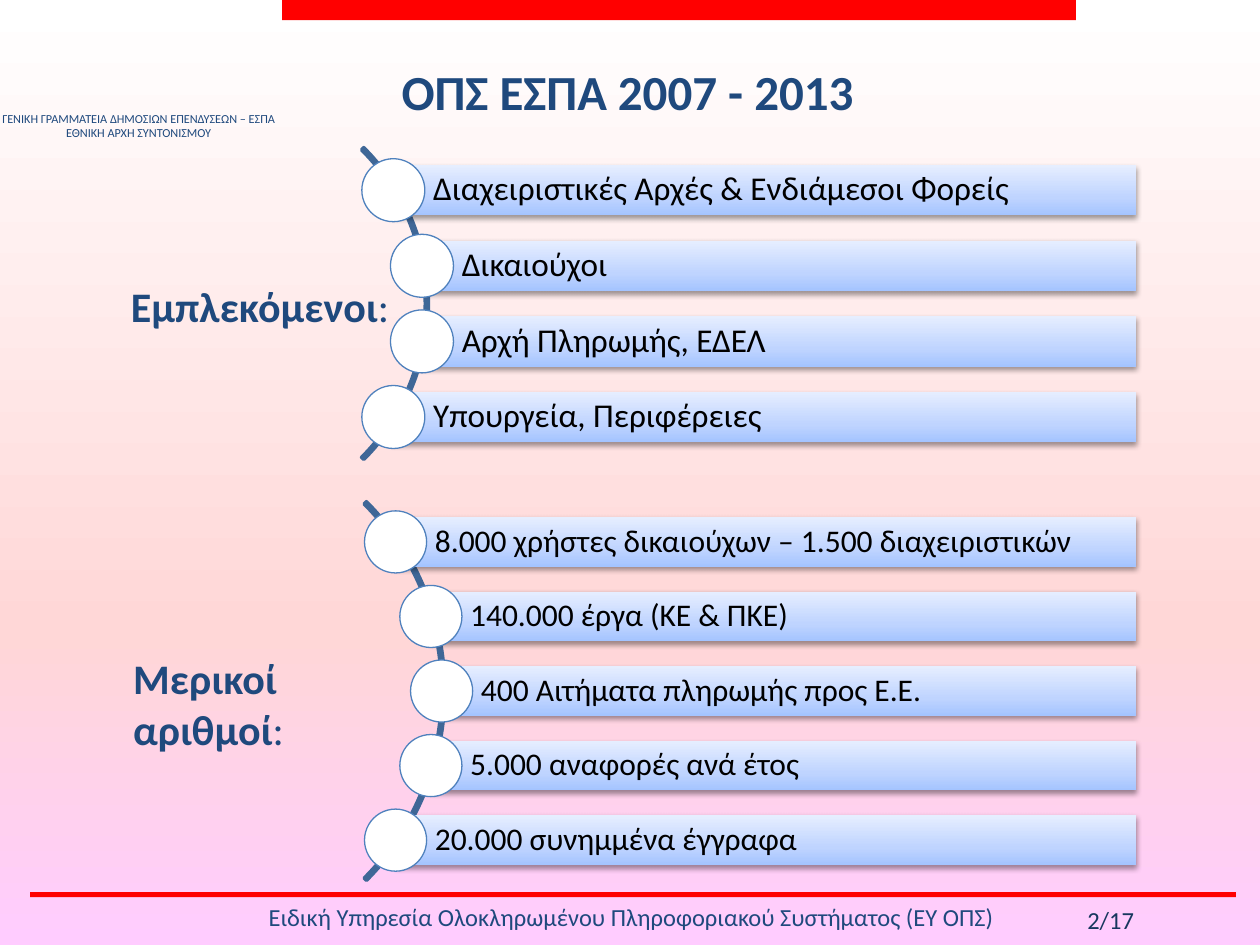
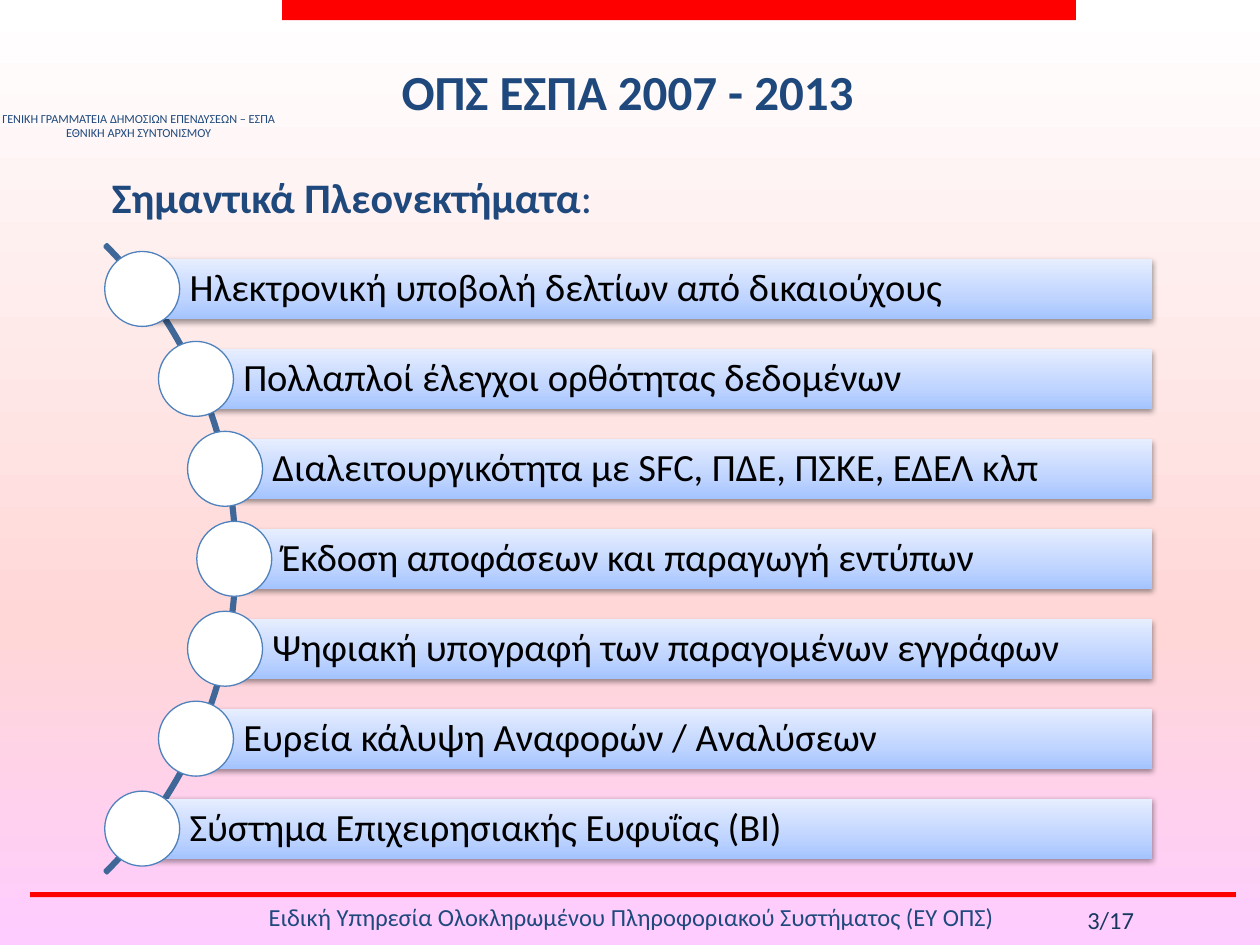
from math import sqrt

from lxml import etree
from pptx import Presentation
from pptx.dml.color import RGBColor
from pptx.enum import shapes, text
from pptx.oxml.ns import qn
from pptx.util import Pt

FONT = "Calibri"
NAVY, DEEP_NAVY, RED = "1F497D", "17375E", "FF0000"
WHITE, BLACK, ARC_BLUE, RING_BLUE = "FFFFFF", "000000", "3F6797", "4F81BD"
PAGE_STOPS = [(0, WHITE), (67, "FFD7D7"), (100, "FFCCFF")]
BAR_STOPS = [(0, "A4C4FF"), (35, "BFD4FF"), (100, "E6EEFF")]
BANDS = [(161.3, 0, 453.6, 11.5), (17.3, 509.8, 689, 2.9)]

TITLE = "ΟΠΣ ΕΣΠΑ 2007 - 2013"
FOOTER = "Ειδική Υπηρεσία Ολοκληρωμένου Πληροφοριακού Συστήματος (ΕΥ ΟΠΣ)"
AGENCY = "ΓΕΝΙΚΗ ΓΡΑΜΜΑΤΕΙΑ ΔΗΜΟΣΙΩΝ ΕΠΕΝΔΥΣΕΩΝ – ΕΣΠΑ\nΕΘΝΙΚΗ ΑΡΧΗ ΣΥΝΤΟΝΙΣΜΟΥ"

PARTIES = {
    "label": "Εμπλεκόμενοι", "label_at": (67.7, 157, 190, 36.7),
    "arc": (-7.2, 47.5, 252), "band": 0.007, "pitch": 43.2, "right": 649.4, "size": 19,
    "items": ["Διαχειριστικές Αρχές & Ενδιάμεσοι Φορείς", "Δικαιούχοι",
              "Αρχή Πληρωμής, ΕΔΕΛ", "Υπουργεία, Περιφέρειες"],
}
NUMBERS = {
    "label": "Μερικοί\vαριθμοί", "label_at": (69, 369.4, 139, 69.8),
    "arc": (-51.8, 241.9, 306), "band": 0.006, "pitch": 42.6, "right": 649.3, "size": 18,
    "items": ["8.000 χρήστες δικαιούχων – 1.500 διαχειριστικών", "140.000 έργα (ΚΕ & ΠΚΕ)",
              "400 Αιτήματα πληρωμής προς Ε.Ε.", "5.000 αναφορές ανά έτος",
              "20.000 συνημμένα έγγραφα"],
}
ADVANTAGES = {
    "label": "Σημαντικά Πλεονεκτήματα", "label_at": (56.9, 94.3, 300, 42.5),
    "arc": (-372.2, 65.5, 507.6), "band": 0.003, "pitch": 51.4, "right": 658.3, "size": 22,
    "items": ["Ηλεκτρονική υποβολή δελτίων από δικαιούχους",
              "Πολλαπλοί έλεγχοι ορθότητας δεδομένων",
              "Διαλειτουργικότητα με SFC, ΠΔΕ, ΠΣΚΕ, ΕΔΕΛ κλπ",
              "Έκδοση αποφάσεων και παραγωγή εντύπων",
              "Ψηφιακή υπογραφή των παραγομένων εγγράφων",
              "Ευρεία κάλυψη Αναφορών / Αναλύσεων",
              "Σύστημα Επιχειρησιακής Ευφυΐας (ΒΙ)"],
}
PAGES = [("2/17", [NUMBERS, PARTIES]), ("3/17", [ADVANTAGES])]


def color(value):
    return RGBColor.from_string(value)


def points(*values):
    return [Pt(value) for value in values]


def add_xml(parent, tag, **attributes):
    return etree.SubElement(parent, qn(tag), {k: str(v) for k, v in attributes.items()})


def set_gradient(fill, owner, stops, angle):
    fill.solid()
    solid = owner.find(qn("a:solidFill"))
    gradient = etree.Element(qn("a:gradFill"), rotWithShape="1")
    stop_list = add_xml(gradient, "a:gsLst")
    for position, value in stops:
        stop = add_xml(stop_list, "a:gs", pos=position * 1000)
        add_xml(stop, "a:srgbClr", val=value)
    add_xml(gradient, "a:lin", ang=angle * 60000, scaled=0)
    owner.replace(solid, gradient)


def add_shadow(shape):
    effects = shape._element.spPr.find(qn("a:effectLst"))
    shadow = add_xml(effects, "a:outerShdw", blurRad=Pt(3.1), dist=Pt(1.6),
                     dir=90 * 60000, rotWithShape=0)
    add_xml(add_xml(shadow, "a:srgbClr", val=BLACK), "a:alpha", val=38000)


def add_shape(page, kind, place, fill=None, line=None, width=0.75):
    shape = page.shapes.add_shape(kind, *points(*place))
    shape.shadow.inherit = False
    if fill:
        shape.fill.solid()
        shape.fill.fore_color.rgb = color(fill)
    else:
        shape.fill.background()
    if line:
        shape.line.color.rgb = color(line)
        shape.line.width = Pt(width)
    else:
        shape.line.fill.background()
    return shape


def write(box, content, size, shade=NAVY, bold=False, align=text.PP_ALIGN.LEFT,
          anchor=text.MSO_ANCHOR.TOP, insets=(7.2, 3.6, 7.2, 3.6)):
    frame = box.text_frame
    frame.text = content
    frame.word_wrap = True
    frame.auto_size = text.MSO_AUTO_SIZE.NONE
    frame.vertical_anchor = anchor
    (frame.margin_left, frame.margin_top,
     frame.margin_right, frame.margin_bottom) = points(*insets)
    for para in frame.paragraphs:
        para.alignment = align
        for span in para.runs:
            style(span, size, shade, bold)
    return frame


def style(span, size, shade, bold):
    span.font.name = FONT
    span.font.size = Pt(size)
    span.font.bold = bold
    span.font.color.rgb = color(shade)


def add_text(page, place, content, size, **options):
    return write(page.shapes.add_textbox(*points(*place)), content, size, **options)


def add_frame(page, number):
    center = text.PP_ALIGN.CENTER
    flush = (0, 0, 0, 0)
    for band in BANDS:
        add_shape(page, shapes.MSO_SHAPE.RECTANGLE, band, RED)
    add_text(page, (52.6, 511.9, 616.3, 24.5), FOOTER, 14, align=center)
    add_text(page, (0, 63.4, 158.4, 17.3), AGENCY, 7, align=center, insets=flush)
    add_text(page, (609.1, 517, 51.1, 20.2), number, 14, shade=DEEP_NAVY,
             align=center, insets=flush)
    title = page.shapes.title
    title.left, title.top, title.width, title.height = points(79.2, 20.9, 558.7, 62.6)
    write(title, TITLE, 28, bold=True, align=center, anchor=text.MSO_ANCHOR.MIDDLE)


def add_label(page, group):
    frame = add_text(page, group["label_at"], group["label"], 24, bold=True)
    para = frame.paragraphs[0]
    colon = para.add_run()
    colon.text = ":"
    style(colon, 24, NAVY, False)


def add_arc_list(page, group):
    left, top, diameter = group["arc"]
    items, pitch, size = group["items"], group["pitch"], group["size"]
    arc = add_shape(page, shapes.MSO_SHAPE.BLOCK_ARC, (left, top, diameter, diameter),
                    line=ARC_BLUE, width=2)
    for index, value in enumerate((189, 27, group["band"])):
        arc.adjustments[index] = value

    radius = diameter / 2
    inner = radius - diameter * group["band"]
    height = pitch * 2 / 3
    dot = height * 1.25
    inset = size * 0.2
    for index, item in enumerate(items):
        offset = (index - (len(items) - 1) / 2) * pitch
        x = left + radius + sqrt(inner ** 2 - offset ** 2)
        y = top + radius + offset
        bar = add_shape(page, shapes.MSO_SHAPE.RECTANGLE,
                        (x, y - height / 2, group["right"] - x, height))
        set_gradient(bar.fill, bar._element.spPr, BAR_STOPS, 270)
        add_shadow(bar)
        frame = write(bar, item, size, shade=BLACK, anchor=text.MSO_ANCHOR.MIDDLE,
                      insets=(height * 0.79, inset, inset, inset))
        frame.paragraphs[0].line_spacing = 0.9
        add_shape(page, shapes.MSO_SHAPE.OVAL, (x - dot / 2, y - dot / 2, dot, dot),
                  WHITE, RING_BLUE)


def main():
    deck = Presentation()
    deck.slide_width, deck.slide_height = points(720, 540)
    master = deck.slide_master
    fill = master.background.fill
    fill.solid()
    set_gradient(fill, master._element.find(".//" + qn("p:bgPr")), PAGE_STOPS, 90)
    for number, groups in PAGES:
        page = deck.slides.add_slide(deck.slide_layouts.get_by_name("Title Only"))
        add_frame(page, number)
        for group in groups:
            add_label(page, group)
            add_arc_list(page, group)
    deck.save("out.pptx")


if __name__ == "__main__":
    main()
